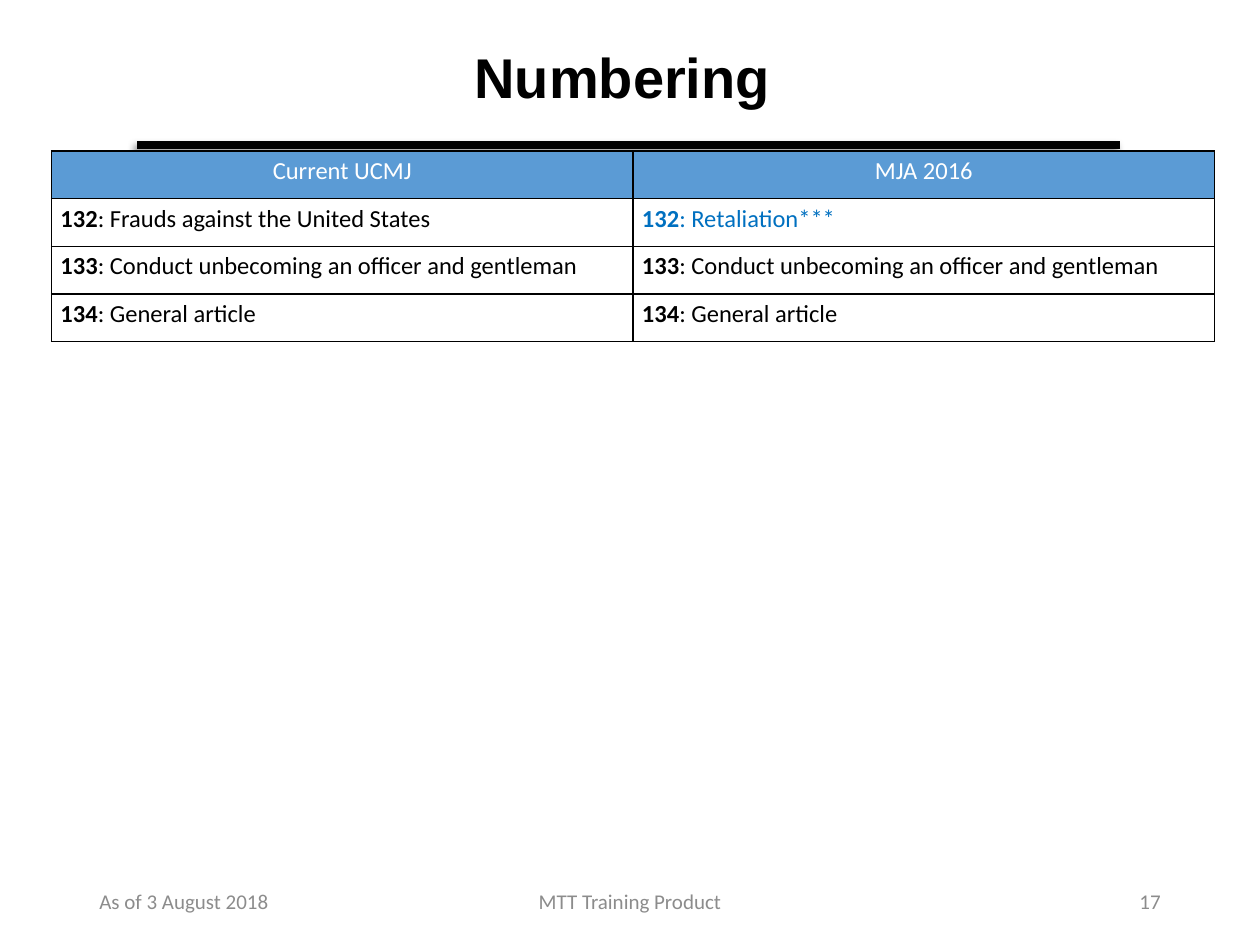
from lxml.etree import SubElement
from pptx import Presentation
from pptx.dml.color import RGBColor as RGB
from pptx.enum.shapes import MSO_CONNECTOR as Link
from pptx.enum.text import MSO_ANCHOR as Anchor, PP_ALIGN as Align
from pptx.oxml import parse_xml
from pptx.oxml.ns import nsdecls, qn
from pptx.util import Inches, Pt

HUES = {"ink": "000000", "paper": "FFFFFF", "head": "5B9BD5",
        "new": "0070C0", "foot": "8C8C8C"}


def hue(name):
    return RGB.from_string(HUES[name])


def style(para, face, size, name, align):
    para.alignment = align
    font = para.font
    font.name, font.size, font.color.rgb = face, Pt(size), hue(name)


deck = Presentation()
deck.slide_width, deck.slide_height = Inches(10), Inches(7.5)
slide = deck.slides.add_slide(deck.slide_layouts[6])
shapes = slide.shapes

# Rule under the title, with a soft shadow
rule = shapes.add_connector(Link.STRAIGHT, Inches(1.09), Inches(1.15),
                            Inches(8.89), Inches(1.15))
rule.line.width = Pt(4.25)
rule.line.color.rgb = hue("ink")
rule._element.spPr.append(parse_xml(
    f'<a:effectLst {nsdecls("a")}>'
    f'<a:outerShdw blurRad="{Pt(4)}" dist="{Pt(3)}" dir="{135 * 60000}">'
    f'<a:srgbClr val="{HUES["ink"]}"><a:alpha val="40000"/></a:srgbClr>'
    '</a:outerShdw></a:effectLst>'))

# Title and footer: left, top, width, height, text, font, size, colour, align
texts = [
    (1.04, 0.23, 7.8, 0.81, "Numbering", "Arial", 32, "ink", Align.CENTER),
    (0.69, 6.95, 2.25, 0.4, "As of 3 August 2018", "Calibri", 12, "foot", Align.LEFT),
    (3.31, 6.95, 3.38, 0.4, "MTT Training Product", "Calibri", 12, "foot", Align.CENTER),
    (7.06, 6.95, 2.25, 0.4, "17", "Calibri", 12, "foot", Align.RIGHT),
]
for *place, words, face, size, name, align in texts:
    frame = shapes.add_textbox(*map(Inches, place)).text_frame
    frame.word_wrap = True
    frame.vertical_anchor = Anchor.MIDDLE
    para = frame.paragraphs[0]
    para.text = words
    style(para, face, size, name, align)
    if words == "Numbering":
        para.font.bold = True
        para.line_spacing = 0.9

# Articles side by side: (number, name) in each cell
heads = ["Current UCMJ", "MJA 2016"]
same = [("133", "Conduct unbecoming an officer and gentleman"),
        ("134", "General article")]
rows = [[("132", "Frauds against the United States"), ("132", "Retaliation***")]]
rows += [[item] * 2 for item in same]

table = shapes.add_table(len(rows) + 1, 2, Inches(0.41), Inches(1.2),
                         Inches(9.23), Inches(1.51)).table
table.first_row = table.horz_banding = False
for r, items in enumerate([heads] + rows):
    for c, item in enumerate(items):
        cell = table.cell(r, c)
        cell.margin_left = cell.margin_right = Inches(0.07)
        cell.margin_top = cell.margin_bottom = Inches(0.04)
        para = cell.text_frame.paragraphs[0]
        if r == 0:
            para.text = item
            style(para, "Calibri", 14, "paper", Align.CENTER)
        else:
            num, label = item
            run = para.add_run()
            run.text, run.font.bold = num, True
            para.add_run().text = f": {label}"
            name = "new" if label.startswith("Retaliation") else "ink"
            style(para, "Calibri", 14, name, Align.LEFT)
        props = cell._tc.get_or_add_tcPr()
        for side in ("lnL", "lnR", "lnT", "lnB"):
            edge = SubElement(props, qn(f"a:{side}"), w=str(Pt(1)))
            paint = SubElement(edge, qn("a:solidFill"))
            SubElement(paint, qn("a:srgbClr"), val=HUES["ink"])
        cell.fill.solid()
        cell.fill.fore_color.rgb = hue("paper" if r else "head")

deck.save("out.pptx")
